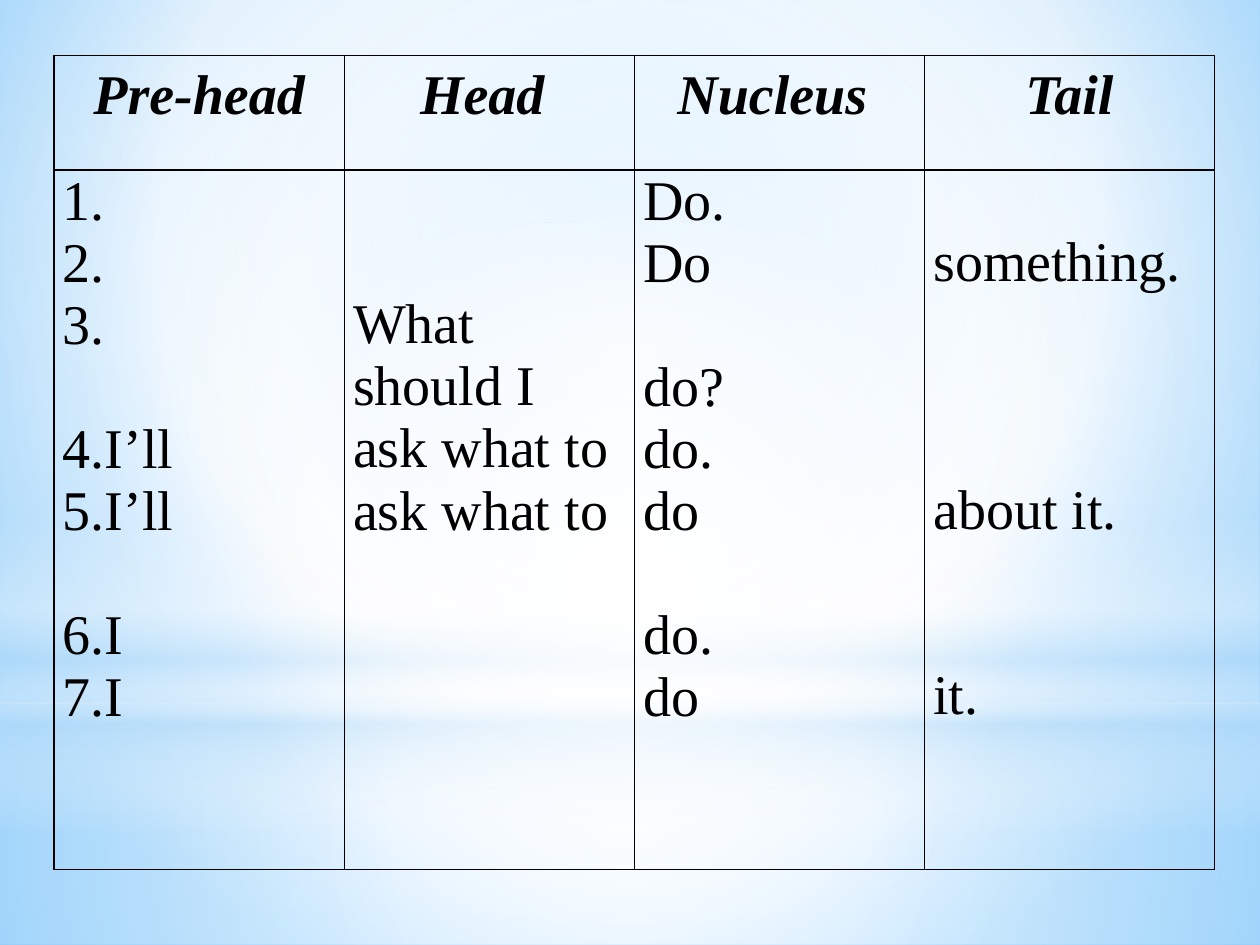
from dataclasses import dataclass

from lxml.etree import SubElement
from pptx import Presentation
from pptx.dml.color import RGBColor
from pptx.enum.shapes import MSO_SHAPE as Kind
from pptx.enum.text import PP_ALIGN as Align
from pptx.oxml.ns import qn
from pptx.util import Inches, Pt

FONT, SIZE = "Times New Roman", 32
LINE = 0.49  # height of one text line in inches
COLORS = {
    "ink": "000000", "white": "FFFFFF", "haze": "B4DCFA",
    "sky": "9ED5FF", "deep": "5BB9FF",
}
MID = (50, 50, 50, 50)


@dataclass
class Stop:
    pos: int
    color: str
    alpha: int = 100


@dataclass
class Glow:
    kind: Kind
    box: tuple[float, float, float, float]
    stops: list[Stop]
    focus: tuple | None = MID


@dataclass
class Line:
    text: str
    skip: int = 0  # lines left free above


GLOWS = [
    Glow(Kind.RECTANGLE, (0, 5.58, 10, 1.92),
         [Stop(0, "white", 91), Stop(37, "white", 76), Stop(100, "haze", 79)]),
    Glow(Kind.RECTANGLE, (0, 0, 10, 5.58),
         [Stop(0, "white", 89), Stop(48, "white", 62), Stop(100, "haze", 79)]),
    Glow(Kind.RECTANGLE, (0, 4.12, 10, 2.5),
         [Stop(0, "white", 0), Stop(29, "white", 30), Stop(45, "haze", 40),
          Stop(55, "white", 26), Stop(65, "haze", 60), Stop(100, "white", 0)],
         None),
    Glow(Kind.OVAL, (0, 1.75, 10, 5.58),
         [Stop(0, "white"), Stop(56, "white", 0)]),
]
HEADS = ["Pre-head", "Head ", "Nucleus ", "Tail"]
BODY = [
    [Line("1."), Line("2."), Line("3."), Line("4.I’ll", 1), Line("5.I’ll"),
     Line("6.I", 1), Line("7.I")],
    [Line("What should I", 2), Line("ask what to"), Line("ask what to")],
    [Line("Do."), Line("Do"), Line("do?", 1), Line("do."), Line("do"),
     Line("do.", 1), Line("do")],
    [Line("something.", 1), Line("about it.", 3), Line("it.", 2)],
]


def blend(solid, stops: list[Stop], focus: tuple | None) -> None:
    """Swap a solid fill for a gradient: round a focus, or downward."""
    grad = solid.makeelement(qn("a:gradFill"), {"rotWithShape": "1"})
    items = SubElement(grad, qn("a:gsLst"))
    for stop in stops:
        gs = SubElement(items, qn("a:gs"), pos=str(stop.pos * 1000))
        clr = SubElement(gs, qn("a:srgbClr"), val=COLORS[stop.color])
        if stop.alpha < 100:
            SubElement(clr, qn("a:alpha"), val=str(stop.alpha * 1000))
    if focus:
        way = SubElement(grad, qn("a:path"), {"path": "circle"})
        sides = {k: str(v * 1000) for k, v in zip("ltrb", focus)}
        SubElement(way, qn("a:fillToRect"), sides)
    else:
        SubElement(grad, qn("a:lin"), ang="5400000", scaled="0")
    solid.getparent().replace(solid, grad)


def add_glow(slide, glow: Glow) -> None:
    shape = slide.shapes.add_shape(glow.kind, *map(Inches, glow.box))
    shape.shadow.inherit = False
    shape.line.fill.background()
    shape.fill.solid()
    solid = shape.element.spPr.find(qn("a:solidFill"))
    blend(solid, glow.stops, glow.focus)


def frame(cell) -> None:
    """Clear the fill and rule all four sides."""
    cell.fill.background()
    props = cell._tc.get_or_add_tcPr()
    for i, side in enumerate("LRTB"):
        rule = props.makeelement(qn(f"a:ln{side}"), {"w": str(Pt(1))})
        fill = SubElement(rule, qn("a:solidFill"))
        SubElement(fill, qn("a:srgbClr"), val=COLORS["ink"])
        props.insert(i, rule)


def fill_cell(cell, lines: list[Line], head: bool = False) -> None:
    frame(cell)
    cell.margin_left = cell.margin_right = Inches(0.07)
    cell.margin_top = Inches(lines[0].skip * LINE)
    cell.margin_bottom = 0
    for i, line in enumerate(lines):
        text = cell.text_frame
        para = text.add_paragraph() if i else text.paragraphs[0]
        para.alignment = Align.CENTER if head else Align.JUSTIFY
        if head:
            para.line_spacing = 1.15
        if i and line.skip:
            para.space_before = Inches(line.skip * LINE)
        run = para.add_run()
        run.text = line.text
        font = run.font
        font.name, font.size = FONT, Pt(SIZE)
        font.bold = font.italic = head
        font.color.rgb = RGBColor.from_string(COLORS["ink"])


def add_grid(slide) -> None:
    box = map(Inches, (0.43, 0.44, 9.21, 6.46))
    table = slide.shapes.add_table(2, len(HEADS), *box).table
    table.first_row = table.horz_banding = False
    for row, high in zip(table.rows, (0.91, 5.55)):
        row.height = Inches(high)
    for i, (head, lines) in enumerate(zip(HEADS, BODY)):
        fill_cell(table.cell(0, i), [Line(head)], head=True)
        fill_cell(table.cell(1, i), lines)


def main() -> None:
    deck = Presentation()
    deck.slide_width, deck.slide_height = Inches(10), Inches(7.5)
    slide = deck.slides.add_slide(deck.slide_layouts[6])
    slide.background.fill.solid()
    solid = slide.element.xpath(".//p:bgPr/a:solidFill")[0]
    blend(solid, [Stop(0, "sky"), Stop(60, "white"), Stop(100, "deep")],
          (20, 10, 20, 60))
    for glow in GLOWS:
        add_glow(slide, glow)
    add_grid(slide)
    deck.save("out.pptx")


if __name__ == "__main__":
    main()
